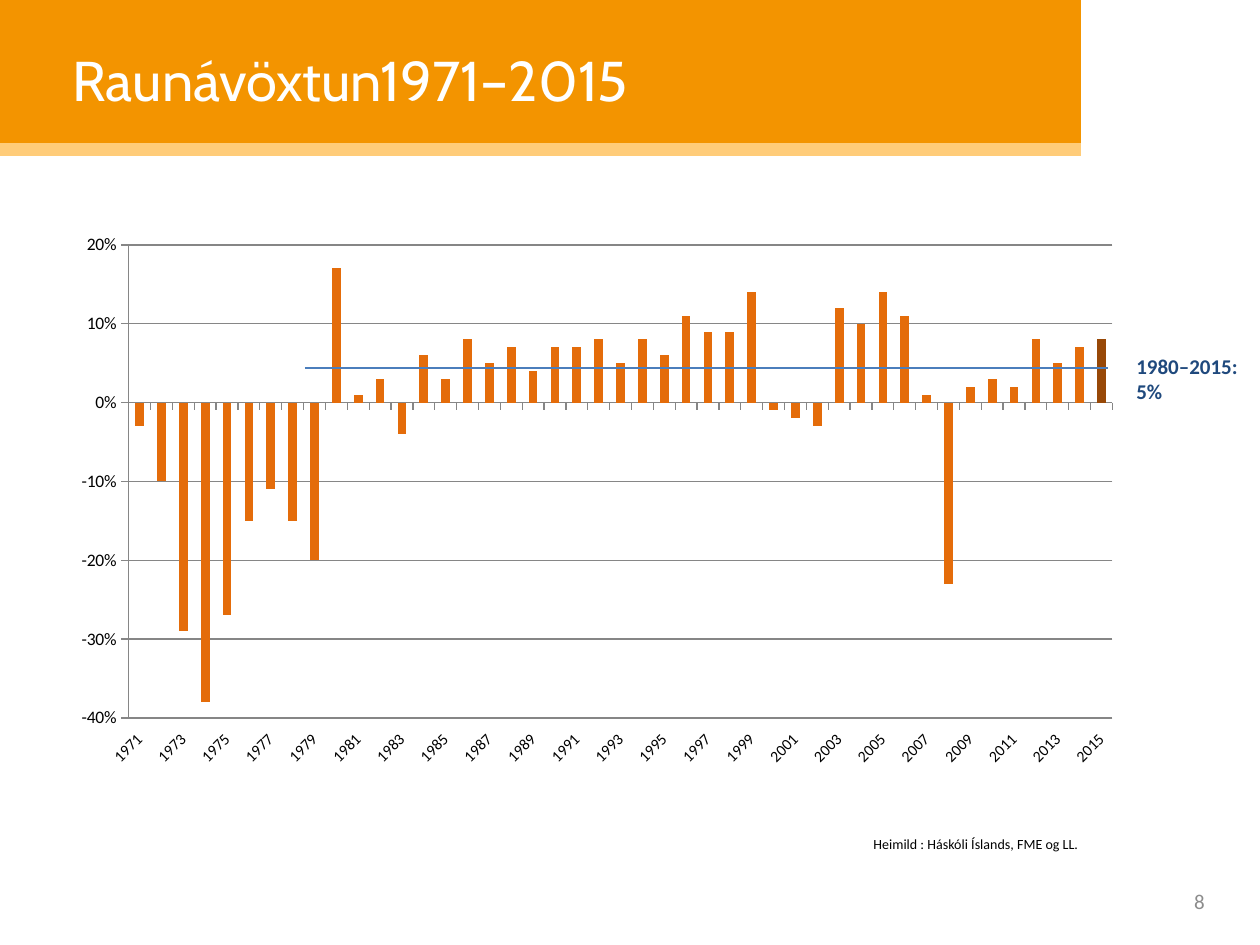
"""Build the slide on real returns 1971–2015."""
import dataclasses

import pptx
import pptx.chart.data
import pptx.dml.color
import pptx.enum.chart
import pptx.enum.shapes
import pptx.enum.text
import pptx.oxml
import pptx.oxml.ns
import pptx.util

SCALE = 914400 / 126
FIRST_YEAR = 1971
RETURNS = [
    -0.03, -0.1, -0.29, -0.38, -0.27, -0.15, -0.11, -0.15, -0.2,
    0.17, 0.01, 0.03, -0.04, 0.06, 0.03, 0.08, 0.05, 0.07, 0.04,
    0.07, 0.07, 0.08, 0.05, 0.08, 0.06, 0.11, 0.09, 0.09, 0.14,
    -0.01, -0.02, -0.03, 0.12, 0.1, 0.14, 0.11, 0.01, -0.23, 0.02,
    0.03, 0.02, 0.08, 0.05, 0.07, 0.08,
]


@dataclasses.dataclass(frozen=True)
class Theme:
    """Colours, fonts and type sizes of the slide."""
    orange: str = "F39400"
    pale_orange: str = "FFCC79"
    bar: str = "E46C0A"
    last_bar: str = "984807"
    white: str = "FFFFFF"
    black: str = "000000"
    gray: str = "8C8C8C"
    rule: str = "868686"
    average: str = "4B7EBC"
    navy: str = "1F497D"
    heading_font: str = "Cabin"
    body_font: str = "Calibri"
    title_size: int = 32
    label_size: int = 12
    value_size: int = 10
    year_size: int = 9
    source_size: int = 8


THEME = Theme()


def px(length):
    """Turn px into EMU."""
    return pptx.util.Emu(round(length * SCALE))


def rgb(color):
    """Turn a hex string into a colour."""
    return pptx.dml.color.RGBColor.from_string(color)


def style_font(font, size, color, face=THEME.body_font, bold=False):
    """Set face, size, colour and weight of a font."""
    font.name = face
    font.size = pptx.util.Pt(size)
    font.bold = bold
    font.color.rgb = rgb(color)


def style_line(line, color, width):
    """Set colour and width in points of a line."""
    line.color.rgb = rgb(color)
    line.width = pptx.util.Pt(width)


def add_band(page, left, top, width, height, color):
    """Add a plain filled rectangle."""
    band = page.shapes.add_shape(
        pptx.enum.shapes.MSO_SHAPE.RECTANGLE,
        px(left), px(top), px(width), px(height))
    band.shadow.inherit = False
    band.fill.solid()
    band.fill.fore_color.rgb = rgb(color)
    band.line.fill.background()


def add_text(page, area, lines, size, color, face=THEME.body_font,
             bold=False, middle=False, right=False):
    """Add a text box of one paragraph, with a break between lines."""
    box = page.shapes.add_textbox(*map(px, area))
    frame = box.text_frame
    frame.word_wrap = True
    if middle:
        frame.vertical_anchor = pptx.enum.text.MSO_ANCHOR.MIDDLE
    para = frame.paragraphs[0]
    if right:
        para.alignment = pptx.enum.text.PP_ALIGN.RIGHT
    for number, line in enumerate(lines):
        if number:
            para.add_line_break()
        span = para.add_run()
        span.text = line
        style_font(span.font, size, color, face, bold)


def add_rule(page, left, right, height, color, width):
    """Add a horizontal line without shadow."""
    rule = page.shapes.add_connector(
        pptx.enum.shapes.MSO_CONNECTOR.STRAIGHT,
        px(left), px(height), px(right), px(height))
    style_line(rule.line, color, width)
    properties = rule._element.spPr
    properties.append(pptx.oxml.parse_xml(
        f"<a:effectLst {pptx.oxml.ns.nsdecls('a')}/>"))


def style_year_axis(axis):
    """Put every second year, slanted, below the plot."""
    axis.tick_label_position = pptx.enum.chart.XL_TICK_LABEL_POSITION.LOW
    axis.major_tick_mark = pptx.enum.chart.XL_TICK_MARK.OUTSIDE
    axis.has_major_gridlines = False
    style_line(axis.format.line, THEME.rule, 0.75)
    style_font(axis.tick_labels.font, THEME.year_size, THEME.black)
    element = axis._element
    element.txPr.bodyPr.set("rot", "-2700000")
    no_multi = element.find(pptx.oxml.ns.qn("c:noMultiLvlLbl"))
    for tag, step in (("tickLblSkip", 2), ("tickMarkSkip", 1)):
        no_multi.addprevious(pptx.oxml.parse_xml(
            f'<c:{tag} {pptx.oxml.ns.nsdecls("c")} val="{step}"/>'))


def style_value_axis(axis):
    """Scale the value axis in steps of ten percent."""
    axis.minimum_scale = -0.4
    axis.maximum_scale = 0.2
    axis.major_unit = 0.1
    axis.major_tick_mark = pptx.enum.chart.XL_TICK_MARK.OUTSIDE
    axis.has_major_gridlines = True
    style_line(axis.major_gridlines.format.line, THEME.rule, 0.75)
    style_line(axis.format.line, THEME.rule, 0.75)
    axis.tick_labels.number_format = "0%"
    axis.tick_labels.number_format_is_linked = False
    style_font(axis.tick_labels.font, THEME.value_size, THEME.black)


def add_returns_chart(page, area):
    """Add the column chart of yearly returns."""
    data = pptx.chart.data.CategoryChartData(number_format="0%")
    data.categories = [str(FIRST_YEAR + step) for step in range(len(RETURNS))]
    data.add_series("Series 1", RETURNS)
    chart = page.shapes.add_chart(
        pptx.enum.chart.XL_CHART_TYPE.COLUMN_CLUSTERED,
        *map(px, area), data).chart
    chart.has_legend = False
    chart.has_title = False
    style_font(chart.font, THEME.value_size, THEME.black)
    style_year_axis(chart.category_axis)
    style_value_axis(chart.value_axis)
    plot = chart.plots[0]
    plot.gap_width = 150
    plot.vary_by_categories = False
    series = plot.series[0]
    series.invert_if_negative = False
    last_point = series.points[len(RETURNS) - 1]
    for item, color in ((series, THEME.bar), (last_point, THEME.last_bar)):
        item.format.fill.solid()
        item.format.fill.fore_color.rgb = rgb(color)


def main():
    """Build and save the deck."""
    deck = pptx.Presentation()
    deck.slide_width, deck.slide_height = px(1260), px(945)
    page = deck.slides.add_slide(deck.slide_layouts[6])
    add_band(page, 0, 19, 1081, 137, THEME.pale_orange)
    add_band(page, 0, 0, 1081, 143, THEME.orange)
    add_returns_chart(page, (60, 224, 1074, 553))
    add_text(page, (60, 0, 1134, 158), ["Raunávöxtun1971–2015"],
             THEME.title_size, THEME.white, THEME.heading_font, middle=True)
    add_text(page, (924, 876, 293, 50), ["8"],
             THEME.label_size, THEME.gray, middle=True, right=True)
    add_rule(page, 305, 1108, 368, THEME.average, 1.25)
    add_text(page, (1124, 347, 136, 63), ["1980–2015: ", "5%"],
             THEME.label_size, THEME.navy, bold=True)
    add_text(page, (861, 829, 378, 30),
             ["Heimild : Háskóli Íslands, FME og LL."],
             THEME.source_size, THEME.black)
    deck.save("out.pptx")


if __name__ == "__main__":
    main()
